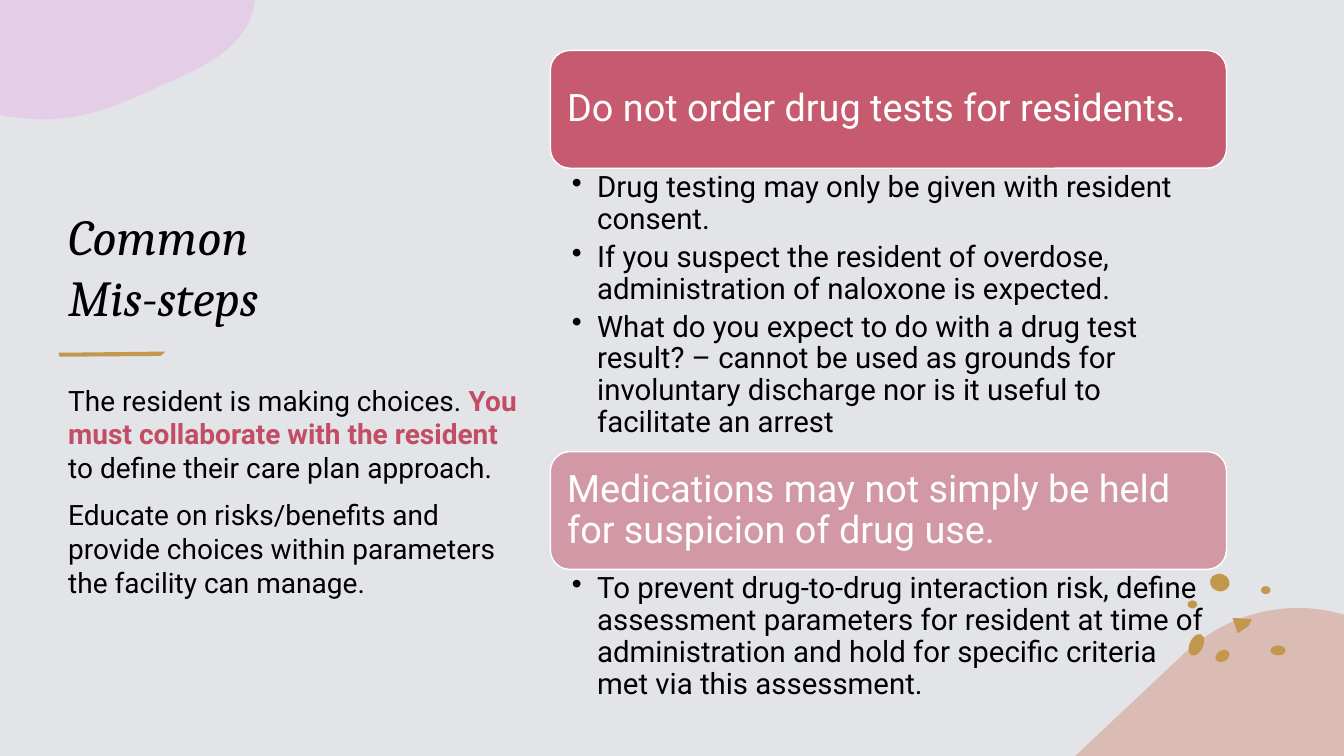
"""Build the "Common Mis-steps" slide with its two advice cards."""
from dataclasses import dataclass, field
from typing import Any, NamedTuple, Optional

from lxml import etree
from pptx import Presentation
from pptx.dml.color import RGBColor
from pptx.enum import shapes, text
from pptx.oxml import ns
from pptx.util import Cm, Pt


@dataclass(frozen=True)
class Theme:
    background: str = "E2E4E8"
    rose: str = "C34D64"
    gold: str = "C3984D"
    salmon: str = "D69684"
    lilac: str = "E6B8E7"
    ink: str = "000000"
    white: str = "FFFFFF"
    serif: str = "Cambria"
    sans: str = "Roboto"
    title: int = 36
    header: int = 27
    bullet: int = 21
    body: int = 20


class Blob(NamedTuple):
    """Outline in cm: a start, then line ends (2 numbers) or cubics (6 numbers)."""
    color: str
    start: tuple
    segments: list
    opacity: int = 100


class Dot(NamedTuple):
    """Gold oval in cm, given by its centre."""
    x: float
    y: float
    width: float
    height: float
    turn: int = 0


@dataclass(frozen=True)
class Span:
    words: str
    font: dict
    break_after: bool = False


@dataclass(frozen=True)
class Para:
    spans: list
    layout: dict = field(default_factory=dict)
    bullet: bool = False


@dataclass(frozen=True)
class Card:
    top: float
    opacity: int
    header: str
    points: list
    points_height: float


THEME = Theme()
CARD_LEFT, CARD_WIDTH, HEADER_HEIGHT = 13.87, 17.04, 2.97
SIDE_LEFT, SIDE_WIDTH = 1.47, 11.99
CURVE_STEPS = 16

BLOBS = [
    Blob(THEME.salmon, (27.1, 19.05), [
        (29.69, 16.61), (30.6, 15.7, 31.7, 15.32, 32.72, 15.32),
        (33.1, 15.32, 33.5, 15.38, 33.87, 15.49), (33.87, 19.05)], 50),
    Blob(THEME.lilac, (0, 0), [
        (6.43, 0), (6.3, 1.25, 4.9, 1.8, 4.01, 2.18), (2.6, 2.85, 1.6, 3.2, 0, 2.9)], 50),
    Blob(THEME.gold, (31.06, 15.57), [(31.55, 15.6), (31.47, 15.77), (31.19, 15.96)]),
    Blob(THEME.gold, (1.48, 8.89), [(4.17, 8.86), (4.05, 8.97), (1.5, 8.99)]),
]

DOTS = [
    Dot(30.81, 16.53, 0.38, 0.28, -30),
    Dot(30.15, 16.25, 0.34, 0.58, 25),
    Dot(32.21, 16.39, 0.38, 0.25),
    Dot(30.74, 14.68, 0.5, 0.44, 15),
    Dot(31.9, 14.87, 0.24, 0.2),
    Dot(30.05, 15.23, 0.24, 0.2),
]

CARDS = [
    Card(1.27, 90, "Do not order drug tests for residents.", [
        "Drug testing may only be given with resident consent.",
        "If you suspect the resident of overdose, administration of naloxone is expected.",
        "What do you expect to do with a drug test result? – cannot be used as grounds for "
        "involuntary discharge nor is it useful to facilitate an arrest"], 7.14),
    Card(11.38, 50, "Medications may not simply be held for suspicion of drug use.", [
        "To prevent drug-to-drug interaction risk, define assessment parameters for resident at "
        "time of administration and hold for specific criteria met via this assessment."], 3.5),
]


def apply(target: Any, values: dict) -> None:
    """Set each named attribute on the target."""
    for name, value in values.items():
        setattr(target, name, value)


def font(size: int, color: str, face: str = THEME.sans, **more: Any) -> dict:
    """Return the format values of a font."""
    return {"size": Pt(size), "name": face, "color": color, **more}


def paint(shape: Any, color: str, opacity: int = 100, outline: Optional[str] = None) -> None:
    """Fill a shape, with an optional one-point outline."""
    shape.shadow.inherit = False
    shape.fill.solid()
    shape.fill.fore_color.rgb = RGBColor.from_string(color)
    if opacity < 100:
        tint = shape._element.spPr.find(ns.qn("a:solidFill")).find(ns.qn("a:srgbClr"))
        etree.SubElement(tint, ns.qn("a:alpha"), val=str(opacity * 1000))
    if outline:
        shape.line.width = Pt(1)
        shape.line.color.rgb = RGBColor.from_string(outline)
    else:
        shape.line.fill.background()


def draw_blob(slide: Any, blob: Blob) -> None:
    """Draw a curved outline as a filled freeform."""
    outline = [blob.start]
    for segment in blob.segments:
        if len(segment) == 2:
            outline.append(segment)
            continue
        ends = [outline[-1], segment[:2], segment[2:4], segment[4:]]
        for step in range(1, CURVE_STEPS + 1):
            t = step / CURVE_STEPS
            weights = ((1 - t) ** 3, 3 * t * (1 - t) ** 2, 3 * t * t * (1 - t), t ** 3)
            outline.append(tuple(sum(w * end[axis] for w, end in zip(weights, ends))
                                 for axis in (0, 1)))
    corners = [(Cm(x), Cm(y)) for x, y in outline]
    builder = slide.shapes.build_freeform(*corners[0])
    builder.add_line_segments(corners[1:], close=True)
    paint(builder.convert_to_shape(), blob.color, blob.opacity)


def draw_dot(slide: Any, dot: Dot) -> None:
    """Draw a gold oval around its centre."""
    box = (dot.x - dot.width / 2, dot.y - dot.height / 2, dot.width, dot.height)
    oval = slide.shapes.add_shape(shapes.MSO_SHAPE.OVAL, *map(Cm, box))
    oval.rotation = dot.turn
    paint(oval, THEME.gold)


def write(frame: Any, paras: list, **frame_values: Any) -> None:
    """Write paragraphs into a text frame."""
    apply(frame, {"word_wrap": True, **frame_values})
    for index, para in enumerate(paras):
        line = frame.add_paragraph() if index else frame.paragraphs[0]
        apply(line, {"alignment": text.PP_ALIGN.LEFT, **para.layout})
        if para.bullet:
            props = line._p.get_or_add_pPr()
            props.set("marL", str(Cm(0.64)))
            props.set("indent", str(Cm(-0.64)))
            etree.SubElement(props, ns.qn("a:buChar"), char="•")
        for span in para.spans:
            run = line.add_run()
            run.text = span.words
            apply(run.font, {k: v for k, v in span.font.items() if k != "color"})
            run.font.color.rgb = RGBColor.from_string(span.font["color"])
            if span.break_after:
                line.add_line_break()


def add_text(slide: Any, box: tuple, paras: list, **frame_values: Any) -> None:
    """Add a text box at left, top, width and height in cm."""
    write(slide.shapes.add_textbox(*map(Cm, box)).text_frame, paras, **frame_values)


def draw_card(slide: Any, card: Card) -> None:
    """Draw a card's header and the points below it."""
    box = (CARD_LEFT, card.top, CARD_WIDTH, HEADER_HEIGHT)
    header = slide.shapes.add_shape(shapes.MSO_SHAPE.ROUNDED_RECTANGLE, *map(Cm, box))
    paint(header, THEME.rose, card.opacity, THEME.white)
    margins = {f"margin_{side}": Cm(0.28) for side in ("left", "top", "right", "bottom")}
    write(header.text_frame,
          [Para([Span(card.header, font(THEME.header, THEME.white))], {"line_spacing": 0.9})],
          vertical_anchor=text.MSO_ANCHOR.MIDDLE, **margins)
    layout = {"level": 1, "line_spacing": 0.9, "space_after": Pt(4.5)}
    points = [Para([Span(point, font(THEME.bullet, THEME.ink))], layout, True)
              for point in card.points]
    add_text(slide, (CARD_LEFT, card.top + HEADER_HEIGHT, CARD_WIDTH, card.points_height), points,
             margin_left=Cm(0.54), margin_right=Cm(0.54), margin_top=Cm(0.1), margin_bottom=Cm(0.1))


def main() -> None:
    """Build and save the slide."""
    deck = Presentation()
    apply(deck, {"slide_width": Cm(33.87), "slide_height": Cm(19.05)})
    slide = deck.slides.add_slide(deck.slide_layouts[6])
    slide.background.fill.solid()
    slide.background.fill.fore_color.rgb = RGBColor.from_string(THEME.background)
    for blob in BLOBS:
        draw_blob(slide, blob)
    for dot in DOTS:
        draw_dot(slide, dot)
    title = font(THEME.title, THEME.ink, THEME.serif, italic=True)
    add_text(slide, (SIDE_LEFT, 2.18, SIDE_WIDTH, 6.17),
             [Para([Span("Common ", title, True), Span("Mis-steps", title)])],
             vertical_anchor=text.MSO_ANCHOR.BOTTOM)
    for card in CARDS:
        draw_card(slide, card)
    plain, strong = font(THEME.body, THEME.ink), font(THEME.body, THEME.rose, bold=True)
    spaced = {"space_before": Pt(10)}
    add_text(slide, (SIDE_LEFT, 9.53, SIDE_WIDTH, 6.78), [
        Para([Span("The resident is making choices. ", plain),
              Span("You must collaborate with the resident ", strong),
              Span("to define their care plan approach.", plain)], spaced),
        Para([Span("Educate on risks/benefits and provide choices within parameters the "
                   "facility can manage.", plain)], spaced)])
    deck.save("out.pptx")


if __name__ == "__main__":
    main()
